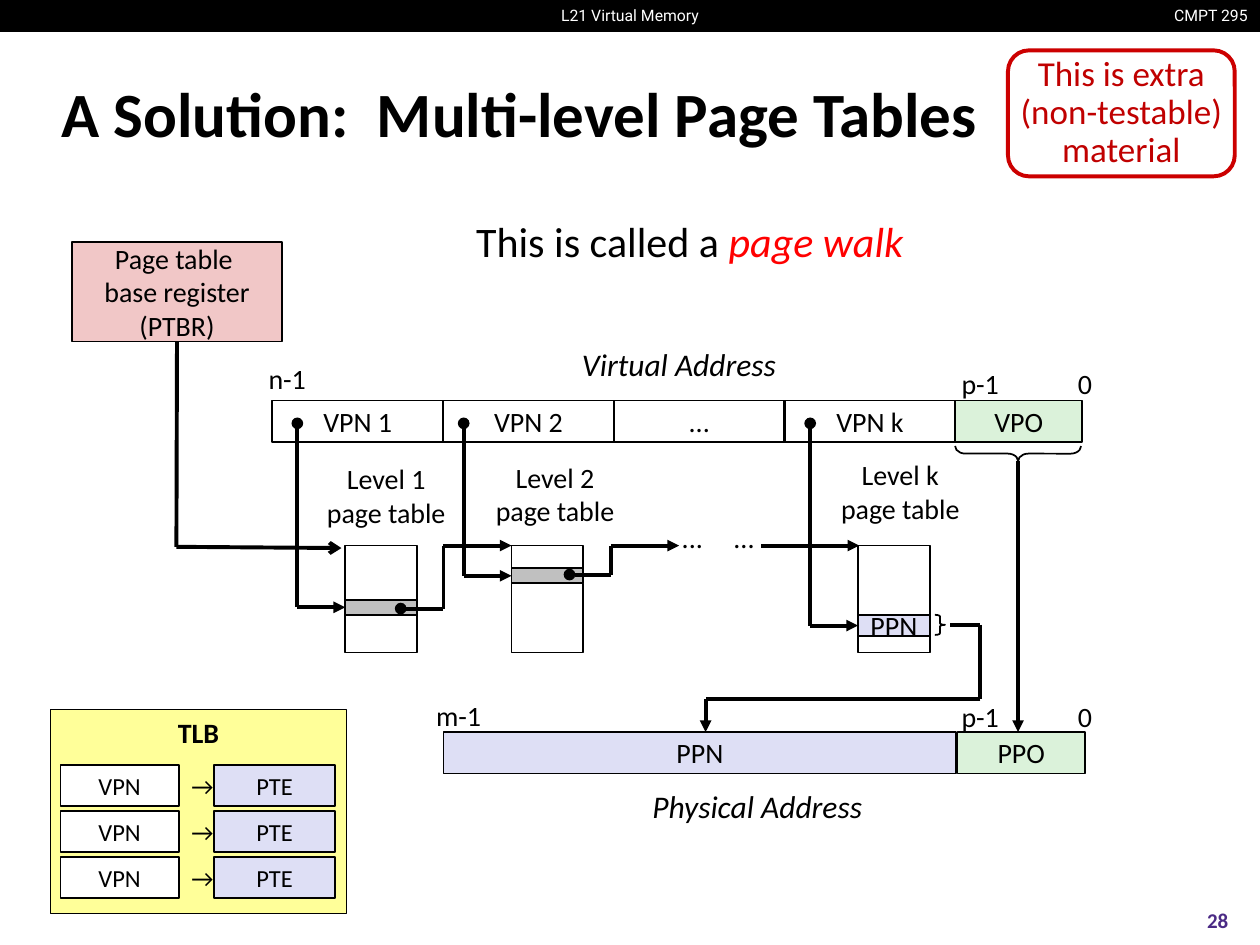
from pptx import Presentation
from pptx.dml.color import RGBColor
from pptx.enum.shapes import MSO_CONNECTOR, MSO_SHAPE
from pptx.enum.text import MSO_ANCHOR, PP_ALIGN
from pptx.oxml import parse_xml
from pptx.oxml.ns import nsdecls
from pptx.util import Inches, Pt

BLACK, WHITE, GREEN, LILAC, GREY = "000000", "FFFFFF", "DBF2DA", "DEDFF5", "C0C0C0"
CENTER, LEFT, RIGHT = PP_ALIGN.CENTER, PP_ALIGN.LEFT, PP_ALIGN.RIGHT


def rgb(value):
    return RGBColor.from_string(value)


def style_run(r, color=BLACK, **fmt):
    for name, value in {"name": "Calibri", "size": Pt(16), **fmt}.items():
        setattr(r.font, name, value)
    r.font.color.rgb = rgb(color)


def write(sp, lines, align=CENTER, anchor=MSO_ANCHOR.MIDDLE, wrap=False, **fmt):
    """Put one paragraph per line into a shape, in one format."""
    tf = sp.text_frame
    tf.word_wrap, tf.vertical_anchor = wrap, anchor
    for i, line in enumerate(lines):
        p = tf.add_paragraph() if i else tf.paragraphs[0]
        p.text, p.alignment = line, align
        for r in p.runs:
            style_run(r, **fmt)
    return tf


def label(shapes, x, y, w, h, *lines, **fmt):
    return write(shapes.add_textbox(*map(Inches, (x, y, w, h))), lines, **fmt)


def box(shapes, x, y, w, h, *lines, fill=None, line=BLACK, width=1,
        kind=MSO_SHAPE.RECTANGLE, **fmt):
    sp = shapes.add_shape(kind, *map(Inches, (x, y, w, h)))
    sp.shadow.inherit = False
    if fill:
        sp.fill.solid()
        sp.fill.fore_color.rgb = rgb(fill)
    else:
        sp.fill.background()
    sp.line.color.rgb = rgb(line)
    sp.line.width = Pt(width)
    if lines:
        write(sp, lines, **fmt)
    return sp


def brace(shapes, x, y, w, h, curve, rotation=0):
    sp = box(shapes, x, y, w, h, kind=MSO_SHAPE.RIGHT_BRACE)
    sp.adjustments[0] = curve
    sp.rotation = rotation


def route(shapes, points, head=None, tail=None, start=None, end=None):
    """Draw straight connectors through the points; start and end are (shape, site)."""
    last = len(points) - 2
    for i, (a, b) in enumerate(zip(points, points[1:])):
        c = shapes.add_connector(MSO_CONNECTOR.STRAIGHT, *map(Inches, a + b))
        c.line.color.rgb = rgb(BLACK)
        c.line.width = Pt(2.25)
        if i == 0 and start:
            c.begin_connect(*start)
        if i == last and end:
            c.end_connect(*end)
        ln = c.line._ln
        if i == 0 and head:
            ln.append(parse_xml(f'<a:headEnd {nsdecls("a")} type="{head}"/>'))
        if i == last and tail:
            ln.append(parse_xml(f'<a:tailEnd {nsdecls("a")} type="{tail}"/>'))
        c._element.spPr.append(parse_xml(f'<a:effectLst {nsdecls("a")}/>'))


def header_and_title(shapes):
    box(shapes, 0, 0, 10, 0.25, fill=BLACK)
    header = dict(name="Roboto", size=Pt(9), color=WHITE, anchor=MSO_ANCHOR.TOP)
    label(shapes, 9.19, 0, 0.81, 0.25, "CMPT 295", align=RIGHT, **header)
    label(shapes, 4.35, 0, 1.3, 0.25, "L21 Virtual Memory", **header)
    label(shapes, 0.39, 0.48, 9.19, 0.83, "A Solution:  Multi-level Page Tables",
          align=LEFT, wrap=True, size=Pt(36), bold=True)
    label(shapes, 9.33, 7.1, 0.67, 0.4, "28", wrap=True, size=Pt(12), bold=True,
          color="4B2A85")
    tf = label(shapes, 3.68, 1.66, 3.62, 0.5, "This is called a ", align=LEFT,
               anchor=MSO_ANCHOR.TOP, size=Pt(24))
    style_run(r := tf.paragraphs[0].add_run(), "FF0000", size=Pt(24), italic=True)
    r.text = "page walk"
    # Callout
    sp = box(shapes, 8, 0.4, 1.8, 1, "This is extra (non-testable) material",
             kind=MSO_SHAPE.ROUNDED_RECTANGLE, line="CC0000", width=2.25,
             wrap=True, size=Pt(20), color="C00000")
    tf = sp.text_frame
    tf.margin_left = tf.margin_right = 0
    tf.paragraphs[0].line_spacing = 0.9


def addresses(shapes):
    # Virtual address fields
    for i, name in enumerate(("VPN 1", "VPN 2", "...", "VPN k")):
        box(shapes, 2.16 + 1.355 * i, 3.18, 1.36, 0.33, name)
    box(shapes, 7.58, 3.18, 1.01, 0.33, "VPO", fill=GREEN)
    brace(shapes, 8.02, 3.1, 0.12, 1, 0.68, rotation=90)
    # Physical address fields
    box(shapes, 7.6, 5.81, 1.01, 0.33, "PPO", fill=GREEN)
    box(shapes, 3.52, 5.81, 4.07, 0.33, "PPN", fill=LILAC)
    # Bit positions and captions
    for y in (2.86, 5.5):
        label(shapes, 8.45, y, 0.32, 0.37, "0")
        label(shapes, 7.53, y, 0.5, 0.37, "p-1")
    label(shapes, 2.03, 2.82, 0.5, 0.37, "n-1")
    label(shapes, 3.36, 5.49, 0.56, 0.37, "m-1")
    for x, y, w, text in ((4.51, 2.69, 1.76, "Virtual Address"),
                          (5.07, 6.2, 1.88, "Physical Address")):
        label(shapes, x, y, w, 0.4, text, size=Pt(18), italic=True)


def page_table(shapes, level, x, entry_y, entry_h, label_at, fill, *text):
    """One table, its entry, and the index arrow coming down from its VPN."""
    box(shapes, x, 4.33, 0.57, 0.85)
    entry = box(shapes, x, entry_y, 0.57, entry_h, *text, fill=fill)
    mid = entry_y + entry_h / 2
    route(shapes, [(x - 0.38, 3.36), (x - 0.38, mid), (x, mid)],
          head="oval", tail="triangle", end=(entry, 1))
    label(shapes, *label_at, 1.15, 0.64, f"Level {level}", "page table")


def page_walk(shapes):
    # Base register
    ptbr = box(shapes, 0.57, 1.92, 1.67, 0.79, "Page table \vbase register", "(PTBR)",
               fill="F1C7C7", wrap=True)
    route(shapes, [(1.4, 2.71), (1.4, 4.34), (2.71, 4.35)], tail="arrow",
          start=(ptbr, 2))
    # Page tables
    page_table(shapes, "1", 2.74, 4.76, 0.12, (2.49, 3.61), GREY)
    page_table(shapes, "2", 4.06, 4.51, 0.12, (3.83, 3.6), GREY)
    page_table(shapes, "k", 6.81, 4.88, 0.17, (6.57, 3.58), LILAC, "PPN")
    brace(shapes, 7.42, 4.88, 0.08, 0.16, 0.16)
    # Links from each entry to the next table
    for x, turn, y in ((3.18, 3.52, 4.83), (4.52, 4.85, 4.56)):
        route(shapes, [(x, y), (turn, y), (turn, 4.33), (turn + 0.54, 4.33)],
              head="oval", tail="triangle")
    for x in (5.31, 5.72):
        label(shapes, x, 4.08, 0.37, 0.37, "...")
    route(shapes, [(6.04, 4.33), (6.82, 4.33)], tail="triangle")
    # Links to the physical address
    route(shapes, [(8.08, 3.66), (8.08, 5.81)], tail="triangle")
    route(shapes, [(7.54, 4.96), (7.78, 4.96), (7.78, 5.55), (5.6, 5.55), (5.6, 5.81)],
          tail="triangle")


def tlb(shapes):
    group = shapes.add_group_shape().shapes
    box(group, 0.4, 5.63, 2.35, 1.62, "TLB", fill="FFFF99", anchor=MSO_ANCHOR.TOP,
        wrap=True, bold=True)
    for i in range(3):
        y = 6.07 + 0.365 * i
        box(group, 1.7, y, 0.96, 0.33, "PTE", fill=LILAC, size=Pt(14))
        box(group, 0.48, y, 0.94, 0.33, "VPN", fill=WHITE, size=Pt(14))
        label(group, 1.42, y, 0.28, 0.33, "→", size=Pt(14))


def main():
    prs = Presentation()
    prs.slide_width, prs.slide_height = Inches(10), Inches(7.5)
    shapes = prs.slides.add_slide(prs.slide_layouts[6]).shapes
    header_and_title(shapes)
    addresses(shapes)
    page_walk(shapes)
    tlb(shapes)
    prs.save("out.pptx")


if __name__ == "__main__":
    main()
